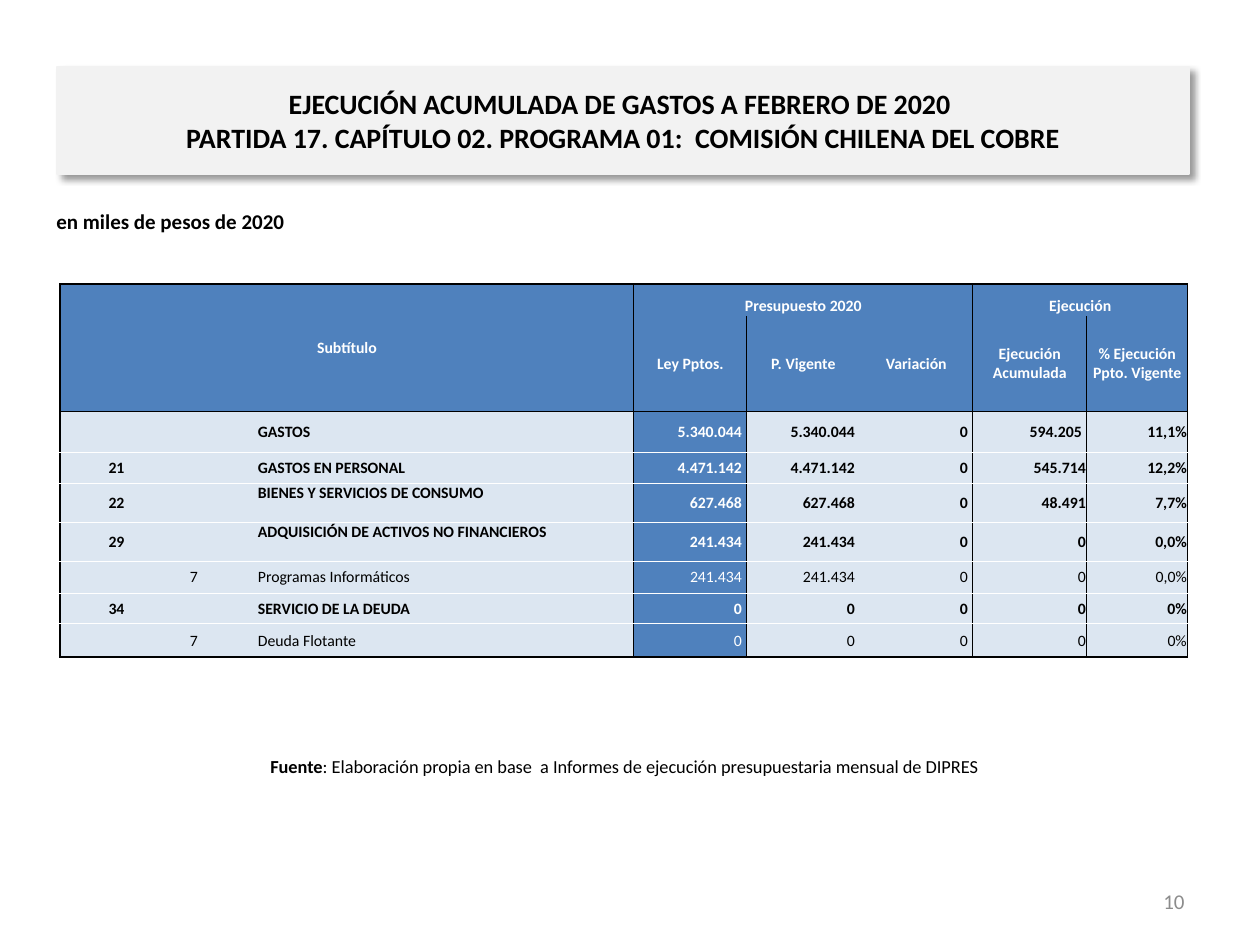
from lxml import etree
from pptx import Presentation
from pptx import util as u
from pptx.dml.color import RGBColor
from pptx.enum import text as t
from pptx.oxml import ns

PX = 914400 / 126
FONT = "Calibri"
BLACK = RGBColor(0, 0, 0)
WHITE = RGBColor(255, 255, 255)
GRAY = RGBColor(0x8C, 0x8C, 0x8C)
PALE_GRAY = RGBColor(0xF2, 0xF2, 0xF2)
BLUE = RGBColor(0x4F, 0x81, 0xBD)
PALE_BLUE = RGBColor(0xDC, 0xE6, 0xF1)
PLAIN_TABLE = "{2D5ABB26-0587-4C30-8999-92F81FD0307C}"

LEFT, CENTER, RIGHT, JUSTIFY = (
    t.PP_ALIGN.LEFT, t.PP_ALIGN.CENTER, t.PP_ALIGN.RIGHT, t.PP_ALIGN.JUSTIFY)
TOP, MIDDLE, BOTTOM = t.MSO_ANCHOR.TOP, t.MSO_ANCHOR.MIDDLE, t.MSO_ANCHOR.BOTTOM

COLUMNS = [113, 42, 42, 377, 113, 113, 113, 114, 101]
ROWS = [32, 95, 41, 31, 39, 39, 32, 31, 33]
LAW, ACCUMULATED = 4, 7
HEADER_ROWS = 2
HEADERS = [
    ["Subtítulo", "", "", "", "Presupuesto 2020", "", "", "Ejecución", ""],
    ["", "", "", "", "Ley Pptos.", "P. Vigente", "Variación",
     "Ejecución Acumulada", "% Ejecución Ppto. Vigente"],
]
EXPENSES = [
    ["", "", "", "GASTOS", "5.340.044", "5.340.044", "0", "594.205", "11,1%"],
    ["21", "", "", "GASTOS EN PERSONAL", "4.471.142", "4.471.142", "0", "545.714", "12,2%"],
    ["22", "", "", "BIENES Y SERVICIOS DE CONSUMO", "627.468", "627.468", "0", "48.491", "7,7%"],
    ["29", "", "", "ADQUISICIÓN DE ACTIVOS NO FINANCIEROS", "241.434", "241.434", "0", "0", "0,0%"],
    ["", "7", "", "Programas Informáticos", "241.434", "241.434", "0", "0", "0,0%"],
    ["34", "", "", "SERVICIO DE LA DEUDA", "0", "0", "0", "0", "0%"],
    ["", "7", "", "Deuda Flotante", "0", "0", "0", "0", "0%"],
]
TOP_LABELS = ("22", "29")


def px(length):
    return u.Emu(round(length * PX))


def add_run(para, words, size, color=BLACK, bold=False):
    span = para.add_run()
    span.text = words
    span.font.name = FONT
    span.font.size = u.Pt(size)
    span.font.bold = bold
    span.font.color.rgb = color


def add_text(page, place, runs, align=LEFT, anchor=MIDDLE):
    box = page.shapes.add_textbox(*map(px, place))
    box.text_frame.word_wrap = True
    box.text_frame.vertical_anchor = anchor
    para = box.text_frame.paragraphs[0]
    para.alignment = align
    for run in runs:
        add_run(para, *run)


def add_shadow(shape):
    effects = etree.SubElement(shape._element.spPr, ns.qn("a:effectLst"))
    shadow = etree.SubElement(
        effects, ns.qn("a:outerShdw"), blurRad=str(u.Pt(4)), dist=str(u.Pt(3)),
        dir=str(45 * 60000), algn="tl", rotWithShape="0")
    color = etree.SubElement(shadow, ns.qn("a:srgbClr"), val=str(BLACK))
    etree.SubElement(color, ns.qn("a:alpha"), val="40000")


def set_title(page, lines):
    title = page.shapes.title
    title.left, title.top, title.width, title.height = map(px, (57, 67, 1132, 107))
    title.fill.solid()
    title.fill.fore_color.rgb = PALE_GRAY
    title.line.color.rgb = PALE_GRAY
    title.line.width = u.Pt(0.75)
    add_shadow(title)
    frame = title.text_frame
    frame.auto_size = t.MSO_AUTO_SIZE.NONE
    frame.vertical_anchor = MIDDLE
    para = frame.paragraphs[0]
    para.alignment = CENTER
    for index, line in enumerate(lines):
        if index:
            para.add_line_break()
        add_run(para, line, 16, BLACK, True)


def vertical_rule(edge):
    if edge in (0, len(COLUMNS)):
        return BLACK, 1
    return (BLACK, 0.5) if edge in (LAW, ACCUMULATED) else None


def horizontal_rule(edge):
    if edge in (0, len(ROWS)):
        return BLACK, 1
    if edge < HEADER_ROWS:
        return None
    return (BLACK if edge == HEADER_ROWS else WHITE), 0.5


def set_borders(cell, row, column):
    rules = {
        "a:lnL": vertical_rule(column),
        "a:lnR": vertical_rule(column + cell.span_width),
        "a:lnT": horizontal_rule(row),
        "a:lnB": horizontal_rule(row + cell.span_height),
    }
    for tag, rule in rules.items():
        if rule:
            color, width = rule
            line = etree.SubElement(
                cell._tc.get_or_add_tcPr(), ns.qn(tag), w=str(u.Pt(width)))
            fill = etree.SubElement(line, ns.qn("a:solidFill"))
            etree.SubElement(fill, ns.qn("a:srgbClr"), val=str(color))


def fill_cell(cell, words, fill, color, bold, align, anchor, inset=1):
    cell.fill.solid()
    cell.fill.fore_color.rgb = fill
    cell.margin_left = cell.margin_top = px(1)
    cell.margin_right, cell.margin_bottom = px(inset), 0
    cell.vertical_anchor = anchor
    para = cell.text_frame.paragraphs[0]
    para.alignment = align
    if words:
        add_run(para, words, 9, color, bold)
    else:
        etree.SubElement(para._p, ns.qn("a:endParaRPr"), sz="900")


def fill_header(table):
    table.cell(0, 0).merge(table.cell(1, LAW - 1))
    table.cell(0, LAW).merge(table.cell(0, ACCUMULATED - 1))
    table.cell(0, ACCUMULATED).merge(table.cell(0, len(COLUMNS) - 1))
    for row, labels in enumerate(HEADERS):
        for column, words in enumerate(labels):
            anchor = BOTTOM if row == 0 and column >= LAW else MIDDLE
            cell = table.cell(row, column)
            set_borders(cell, row, column)
            fill_cell(cell, words, BLUE, WHITE, True, CENTER, anchor)


def fill_expenses(table):
    for row, values in enumerate(EXPENSES, HEADER_ROWS):
        bold = not values[1]
        for column, words in enumerate(values):
            is_law = column == LAW
            is_label = column == LAW - 1
            align = JUSTIFY if is_label else RIGHT if column >= LAW else CENTER
            anchor = TOP if is_label and values[0] in TOP_LABELS else MIDDLE
            spaced_to = ACCUMULATED + (row == HEADER_ROWS)
            inset = 5 if LAW <= column < spaced_to else 1
            cell = table.cell(row, column)
            set_borders(cell, row, column)
            fill_cell(cell, words, BLUE if is_law else PALE_BLUE,
                      WHITE if is_law else BLACK, bold, align, anchor, inset)


def add_budget_table(page):
    frame = page.shapes.add_table(
        len(ROWS), len(COLUMNS), px(60), px(284), px(sum(COLUMNS)), px(sum(ROWS)))
    table = frame.table
    table.first_row = table.horz_banding = False
    table._tbl.tblPr.find(ns.qn("a:tableStyleId")).text = PLAIN_TABLE
    for column, width in zip(table.columns, COLUMNS):
        column.width = px(width)
    for row, height in zip(table.rows, ROWS):
        row.height = px(height)
    fill_header(table)
    fill_expenses(table)


def main():
    deck = Presentation()
    deck.slide_width, deck.slide_height = px(1260), px(945)
    page = deck.slides.add_slide(deck.slide_layouts[5])
    set_title(page, ["EJECUCIÓN ACUMULADA DE GASTOS A FEBRERO DE 2020 ",
                     "PARTIDA 17. CAPÍTULO 02. PROGRAMA 01:  COMISIÓN CHILENA DEL COBRE"])
    add_text(page, (44, 202, 987, 43),
             [("en miles de pesos de 2020", 12, BLACK, True)], anchor=TOP)
    add_budget_table(page)
    add_text(page, (60, 741, 1129, 50), [
        ("Fuente", 10.5, BLACK, True),
        (": Elaboración propia en base  a Informes de ejecución presupuestaria mensual de DIPRES", 10.5),
    ], CENTER)
    add_text(page, (903, 876, 294, 50), [("10", 12, GRAY)], RIGHT)
    deck.save("out.pptx")


if __name__ == "__main__":
    main()
